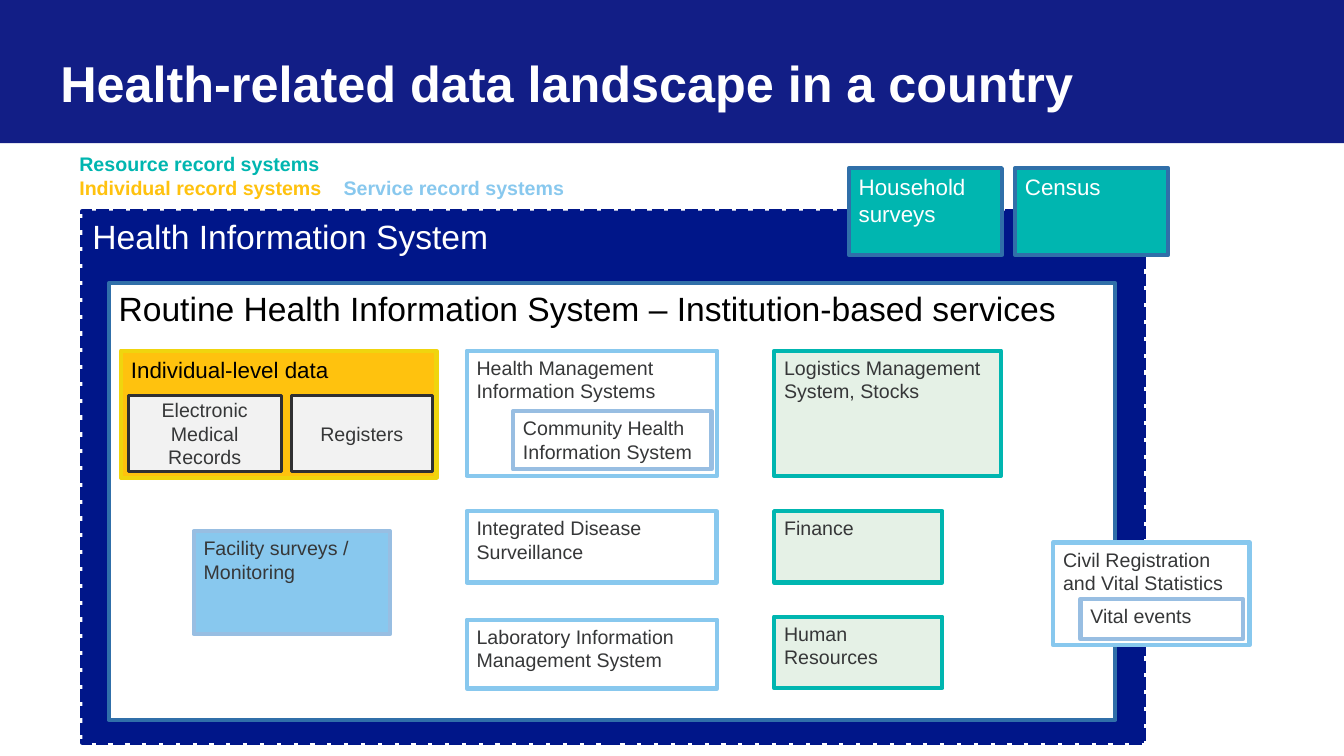
from pptx import Presentation
from pptx.dml.color import RGBColor
from pptx.enum.dml import MSO_LINE
from pptx.enum.shapes import MSO_SHAPE
from pptx.enum.text import MSO_ANCHOR as Anchor, PP_ALIGN as Align
from pptx.oxml.ns import qn
from pptx.util import Cm, Pt
from lxml.etree import SubElement

WHITE, BLACK, TEXT = "FFFFFF", "000000", "363738"
TITLE_BLUE, NAVY, STEEL = "121E86", "001689", "306FA9"
TEAL, MINT = "00B6B0", "E5F1E6"
AMBER, YELLOW = "FFC20E", "F0D50E"
SKY, PALE_BLUE = "88C8EE", "98BEE2"
GREY, CHARCOAL = "F2F2F2", "303032"


def color(value):
    return RGBColor.from_string(value)


class LandscapePage:
    font = "Arial"

    def __init__(self, page):
        self.page = page

    def style(self, font, size, ink, bold=False):
        font.name, font.size, font.bold = self.font, Pt(size), bold
        font.color.rgb = color(ink)

    def block(self, text, place, fill, line=None, size=14, ink=TEXT,
              width=3, centred=False):
        box = self.page.shapes.add_shape(
            MSO_SHAPE.RECTANGLE, *[Cm(length) for length in place])
        box.shadow.inherit = False
        box.fill.solid()
        box.fill.fore_color.rgb = color(fill)
        if line:
            box.line.color.rgb = color(line)
            box.line.width = Pt(width)
        else:
            box.line.fill.background()
        frame = box.text_frame
        frame.word_wrap = True
        frame.vertical_anchor = Anchor.MIDDLE if centred else Anchor.TOP
        para = frame.paragraphs[0]
        para.text = text
        para.alignment = Align.CENTER if centred else Align.LEFT
        self.style(para.font, size, ink)
        return box

    def title(self, text):
        box = self.block(text, (0, 0, 33.87, 3.61), TITLE_BLUE, size=36, ink=WHITE)
        frame = box.text_frame
        frame.vertical_anchor = Anchor.BOTTOM
        frame.margin_left, frame.margin_top = Cm(1.52), Cm(0.13)
        frame.margin_right, frame.margin_bottom = Cm(0.25), Cm(0.76)
        frame.paragraphs[0].line_spacing = 0.9
        frame.paragraphs[0].font.bold = True

    def legend(self, rows, place, tab):
        box = self.page.shapes.add_textbox(*[Cm(length) for length in place])
        frame = box.text_frame
        frame.word_wrap = True
        for index, row in enumerate(rows):
            para = frame.add_paragraph() if index else frame.paragraphs[0]
            if len(row) > 1:
                stops = SubElement(para._p.get_or_add_pPr(), qn("a:tabLst"))
                SubElement(stops, qn("a:tab"), pos=str(Cm(tab)), algn="l")
            for number, (text, ink) in enumerate(row):
                span = para.add_run()
                span.text = "\t" + text if number else text
                self.style(span.font, 14, ink, bold=True)


def main():
    deck = Presentation()
    deck.slide_width, deck.slide_height = Cm(33.87), Cm(19.05)
    page = LandscapePage(deck.slides.add_slide(deck.slide_layouts[6]))
    page.title("Health-related data landscape in a country")

    # Nested system frames
    system = page.block("Health Information System", (2.08, 5.31, 26.75, 13.41),
                        NAVY, NAVY, size=24, ink=WHITE)
    system.line.dash_style = MSO_LINE.SQUARE_DOT
    page.block("Routine Health Information System – Institution-based services",
               (2.74, 7.14, 25.37, 11), WHITE, STEEL, size=24, ink=BLACK)

    # Individual records and facility surveys
    page.block("Individual-level data", (3.05, 8.84, 7.95, 3.2),
               AMBER, YELLOW, size=16, ink=BLACK)
    for text, left, width in (("Electronic Medical Records", 3.23, 3.86),
                              ("Registers", 7.34, 3.56)):
        page.block(text, (left, 9.96, width, 1.93), GREY, CHARCOAL,
                   width=2, centred=True)
    page.block("Facility surveys / Monitoring", (4.88, 13.39, 4.95, 2.59),
               SKY, PALE_BLUE)

    # Service record systems, each followed by its inner part
    for text, place, line in (
        ("Health Management Information Systems", (11.76, 8.84, 6.32, 3.15), SKY),
        ("Community Health Information System", (12.93, 10.36, 5, 1.47), PALE_BLUE),
        ("Laboratory Information Management System", (11.76, 15.62, 6.32, 1.73), SKY),
        ("Integrated Disease Surveillance", (11.76, 12.88, 6.3, 1.8), SKY),
        ("Civil Registration and Vital Statistics", (26.54, 13.67, 4.95, 2.59), SKY),
        ("Vital events", (27.23, 15.09, 4.09, 1.02), PALE_BLUE),
    ):
        page.block(text, place, WHITE, line)

    # Resource record systems
    for text, top, width, height in (
        ("Logistics Management System, Stocks", 8.84, 5.72, 3.15),
        ("Human Resources", 15.54, 4.24, 1.8),
        ("Finance", 12.88, 4.24, 1.8),
    ):
        page.block(text, (19.51, top, width, height), MINT, TEAL)

    # Population sources
    for text, left in (("Household surveys", 21.39), ("Census", 25.58)):
        page.block(text, (left, 4.24, 3.86, 2.18), TEAL, STEEL, size=16, ink=WHITE)

    # Colour key
    page.legend(
        [[("Resource record systems", TEAL)],
         [("Individual record systems", AMBER), ("Service record systems", SKY)]],
        (1.75, 3.71, 13.67, 1.45), tab=6.66)

    deck.save("out.pptx")


if __name__ == "__main__":
    main()
